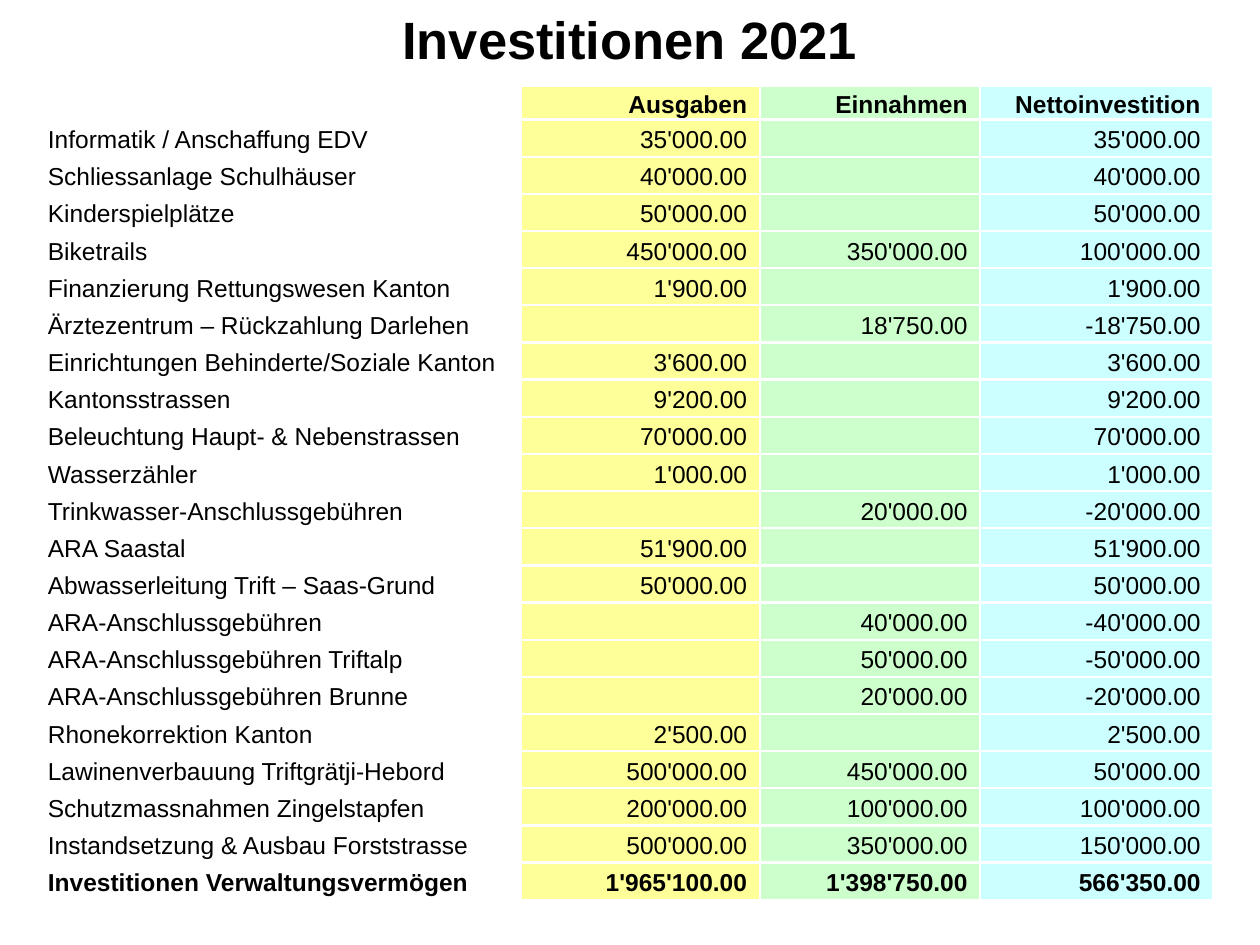
from lxml import etree
from pptx import Presentation
from pptx.dml.color import RGBColor
from pptx.enum.text import MSO_ANCHOR, MSO_AUTO_SIZE, PP_ALIGN
from pptx.oxml.ns import qn
from pptx.util import Inches, Pt

LEFT, CENTER, RIGHT = PP_ALIGN.LEFT, PP_ALIGN.CENTER, PP_ALIGN.RIGHT
MIDDLE = MSO_ANCHOR.MIDDLE
FIT_SHAPE = MSO_AUTO_SIZE.SHAPE_TO_FIT_TEXT

COLORS = {
    "text": "000000",
    "border": "FFFFFF",
    "Ausgaben": "FFFF99",
    "Einnahmen": "CCFFCC",
    "Nettoinvestition": "CCFFFF",
}
FONT_SIZE = 14
HEADER = ["", "Ausgaben", "Einnahmen", "Nettoinvestition"]
COLUMN_WIDTHS = [3.85, 1.9, 1.75, 1.85]
HEADER_HEIGHT = 0.26
BODY_HEIGHT = 6.2

# Investment, expenditure, income
INVESTMENTS = [
    ("Informatik / Anschaffung EDV", 35000, 0),
    ("Schliessanlage Schulhäuser", 40000, 0),
    ("Kinderspielplätze", 50000, 0),
    ("Biketrails", 450000, 350000),
    ("Finanzierung Rettungswesen Kanton", 1900, 0),
    ("Ärztezentrum – Rückzahlung Darlehen", 0, 18750),
    ("Einrichtungen Behinderte/Soziale Kanton", 3600, 0),
    ("Kantonsstrassen", 9200, 0),
    ("Beleuchtung Haupt- & Nebenstrassen", 70000, 0),
    ("Wasserzähler", 1000, 0),
    ("Trinkwasser-Anschlussgebühren", 0, 20000),
    ("ARA Saastal", 51900, 0),
    ("Abwasserleitung Trift – Saas-Grund", 50000, 0),
    ("ARA-Anschlussgebühren", 0, 40000),
    ("ARA-Anschlussgebühren Triftalp", 0, 50000),
    ("ARA-Anschlussgebühren Brunne", 0, 20000),
    ("Rhonekorrektion Kanton", 2500, 0),
    ("Lawinenverbauung Triftgrätji-Hebord", 500000, 450000),
    ("Schutzmassnahmen Zingelstapfen", 200000, 100000),
    ("Instandsetzung & Ausbau Forststrasse", 500000, 350000),
]


def add_text(paragraph, text, size, bold):
    run = paragraph.add_run()
    run.text = text
    font_format = {"name": "Arial", "size": Pt(size), "bold": bold}
    for name, value in font_format.items():
        setattr(run.font, name, value)
    run.font.color.rgb = RGBColor.from_string(COLORS["text"])


def add_borders(cell):
    properties = cell._tc.get_or_add_tcPr()
    for side in ("lnL", "lnR", "lnT", "lnB"):
        line = etree.SubElement(properties, qn(f"a:{side}"), w=str(Pt(1.5)))
        fill = etree.SubElement(line, qn("a:solidFill"))
        etree.SubElement(fill, qn("a:srgbClr"), val=COLORS["border"])


presentation = Presentation()
presentation.slide_width = Inches(10)
presentation.slide_height = Inches(7.5)
slide = presentation.slides.add_slide(presentation.slide_layouts[5])

# Title
title = slide.shapes.title
title_place = {"left": 0, "top": 0, "width": 10, "height": 0.61}
for name, value in title_place.items():
    setattr(title, name, Inches(value))
title.text_frame.auto_size = FIT_SHAPE
title.text_frame.vertical_anchor = MIDDLE
title_paragraph = title.text_frame.paragraphs[0]
title_paragraph.alignment = CENTER
add_text(title_paragraph, "Investitionen 2021", 30, True)

# Table rows, with net amounts and totals worked out
total_spent = sum(spent for _, spent, _ in INVESTMENTS)
total_received = sum(received for _, _, received in INVESTMENTS)
total = ("Investitionen Verwaltungsvermögen", total_spent, total_received)
rows = [HEADER]
for label, spent, received in INVESTMENTS + [total]:
    amounts = (spent, received, spent - received)
    rows.append([label] + [f"{amount:,.2f}".replace(",", "'") if amount else ""
                           for amount in amounts])

# Table grid
table_shape = slide.shapes.add_table(
    len(rows), len(HEADER), Inches(0.28), Inches(0.68),
    Inches(sum(COLUMN_WIDTHS)), Inches(HEADER_HEIGHT + BODY_HEIGHT))
table = table_shape.table
for column, width in zip(table.columns, COLUMN_WIDTHS):
    column.width = Inches(width)
for row in table.rows:
    row.height = Inches(BODY_HEIGHT / (len(rows) - 1))
table.rows[0].height = Inches(HEADER_HEIGHT)

# Table cells
cell_format = {
    "margin_left": Inches(0.1),
    "margin_right": Inches(0.1),
    "margin_top": 0,
    "margin_bottom": 0,
    "vertical_anchor": MIDDLE,
}
for row_index, row_texts in enumerate(rows):
    bold = row_index in (0, len(rows) - 1)
    for column_index, text in enumerate(row_texts):
        cell = table.cell(row_index, column_index)
        for name, value in cell_format.items():
            setattr(cell, name, value)
        add_borders(cell)
        if column_index:
            cell.fill.solid()
            cell.fill.fore_color.rgb = RGBColor.from_string(COLORS[HEADER[column_index]])
        else:
            cell.fill.background()

        paragraph = cell.text_frame.paragraphs[0]
        paragraph_format = {
            "alignment": RIGHT if column_index else LEFT,
            "line_spacing": 1.15,
            "space_after": Pt(10),
        }
        for name, value in paragraph_format.items():
            setattr(paragraph, name, value)
        if text:
            add_text(paragraph, text, FONT_SIZE, bold)
        else:
            # Keeps empty cells from stretching their row
            etree.SubElement(paragraph._p, qn("a:endParaRPr"), sz=str(FONT_SIZE * 100))

presentation.save("out.pptx")
